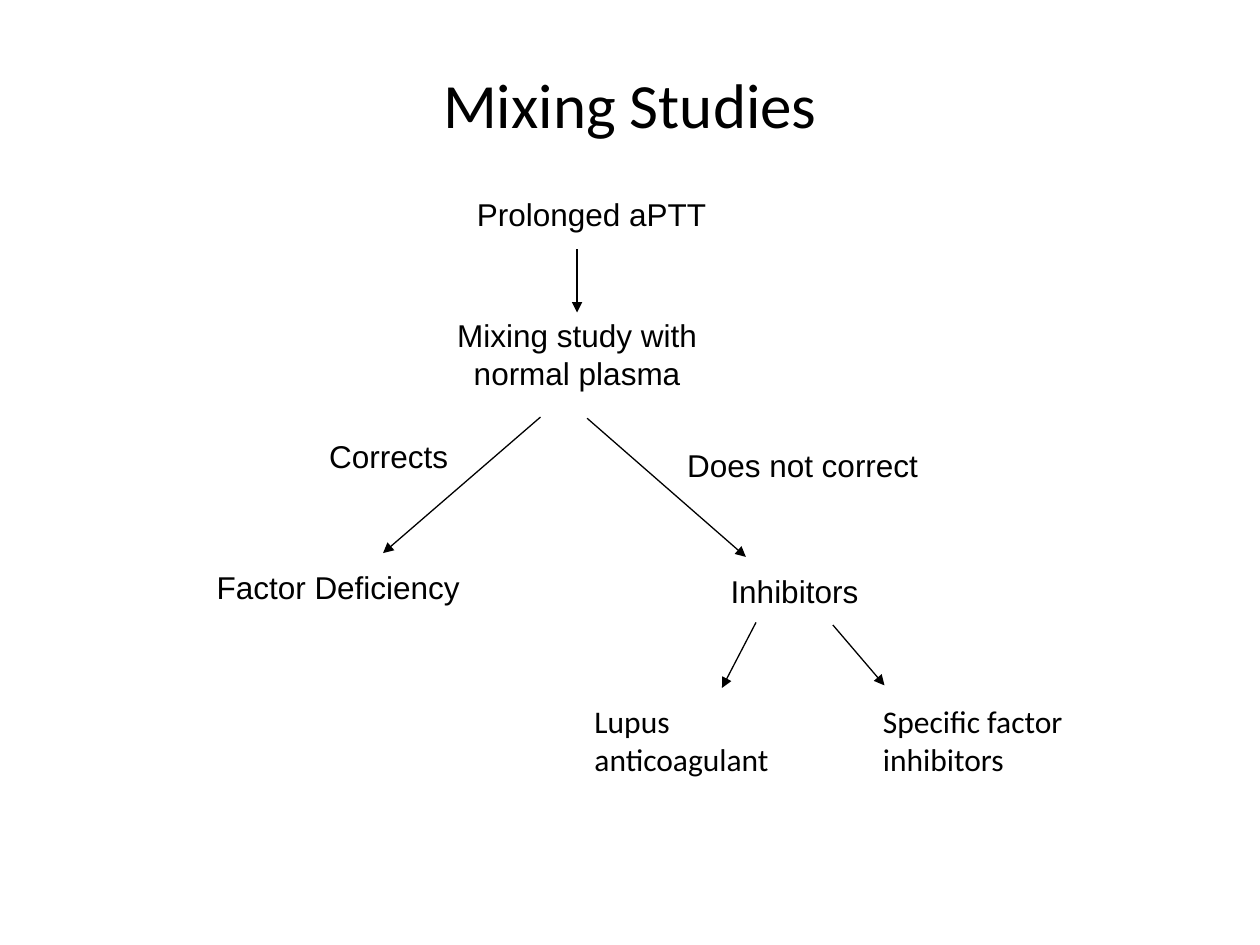
from lxml import etree
from pptx import Presentation
from pptx.dml.color import RGBColor
from pptx.enum.shapes import MSO_CONNECTOR as Connector
from pptx.enum.text import MSO_ANCHOR as Anchor, MSO_AUTO_SIZE as AutoSize, PP_ALIGN as Align
from pptx.oxml.ns import qn
from pptx.util import Inches, Pt

COLORS = {"ink": "000000", "background": "FFFFFF"}
INK = RGBColor.from_string(COLORS["ink"])

TITLE = ("Mixing Studies", (0.5, 0.36, 9, 0.92))
STEP = {"font": "Calibri", "align": Align.LEFT}
NODE = {"font": "Arial", "align": Align.CENTER}
LABELS = [
    ("Prolonged aPTT", (2.82, 1.5, 3.75, 0.4), NODE),
    ("Mixing study with normal plasma", (3.33, 2.46, 2.5, 0.71), NODE),
    ("Factor Deficiency", (1.36, 4.46, 2.65, 0.4), NODE),
    ("Inhibitors", (5.4, 4.49, 1.81, 0.4), NODE),
    ("Corrects", (2.42, 3.42, 1.33, 0.4), NODE),
    ("Does not correct", (5.12, 3.49, 2.5, 0.4), NODE),
    ("Lupus anticoagulant", (4.62, 5.52, 2, 0.71), STEP),
    ("Specific factor inhibitors", (6.91, 5.52, 2.1, 0.71), STEP),
]
ARROWS = [
    (4.58, 1.98, 4.58, 2.48),
    (4.29, 3.31, 3.04, 4.39),
    (4.66, 3.32, 5.92, 4.42),
    (6.61, 4.96, 7.02, 5.44),
    (6, 4.94, 5.73, 5.46),
]


def inches(values):
    return [Inches(value) for value in values]


def set_attributes(target, values):
    for name, value in values.items():
        setattr(target, name, value)


def write_text(shape, text, font, size, align):
    paragraph = shape.text_frame.paragraphs[0]
    paragraph.text = text
    paragraph.alignment = align
    text_font = paragraph.runs[0].font
    set_attributes(text_font, {"name": font, "size": Pt(size)})
    text_font.color.rgb = INK


def add_title(slide):
    text, box = TITLE
    title = slide.shapes.title
    set_attributes(title, dict(zip(("left", "top", "width", "height"), inches(box))))
    set_attributes(title.text_frame, {"word_wrap": True, "vertical_anchor": Anchor.MIDDLE})
    write_text(title, text, "Calibri", 36, Align.CENTER)


def add_label(slide, text, box, style):
    label = slide.shapes.add_textbox(*inches(box))
    set_attributes(label.text_frame, {"word_wrap": True, "auto_size": AutoSize.SHAPE_TO_FIT_TEXT})
    write_text(label, text, style["font"], 18, style["align"])


def add_arrow(slide, points):
    arrow = slide.shapes.add_connector(Connector.STRAIGHT, *inches(points))
    arrow.line.width = Pt(0.75)
    arrow.line.color.rgb = INK
    etree.SubElement(arrow.line._get_or_add_ln(), qn("a:tailEnd"), type="triangle")
    etree.SubElement(arrow._element.spPr, qn("a:effectLst"))


def main():
    presentation = Presentation()
    set_attributes(presentation, {"slide_width": Inches(10), "slide_height": Inches(7.5)})
    slide = presentation.slides.add_slide(presentation.slide_layouts[5])
    slide.background.fill.solid()
    slide.background.fill.fore_color.rgb = RGBColor.from_string(COLORS["background"])
    add_title(slide)
    for label in LABELS:
        add_label(slide, *label)
    for points in ARROWS:
        add_arrow(slide, points)
    presentation.save("out.pptx")


if __name__ == "__main__":
    main()
